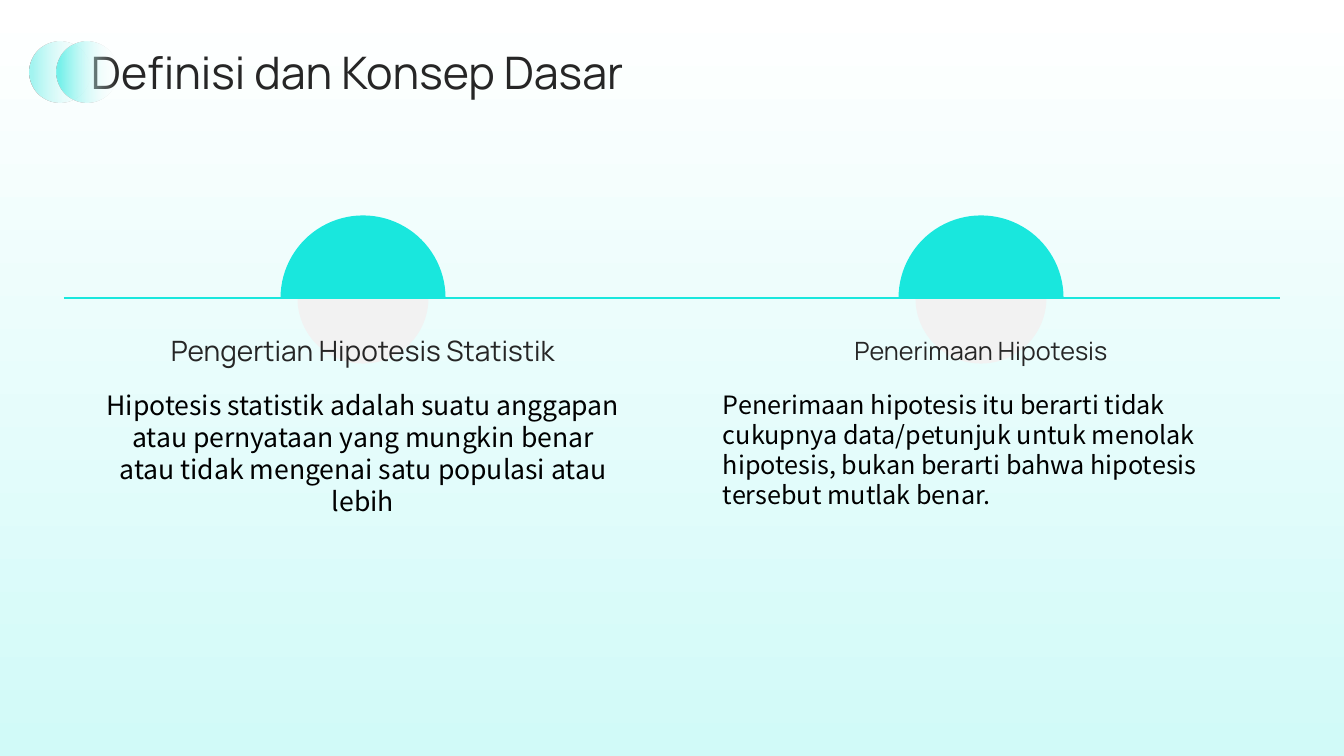
from lxml.etree import SubElement
from pptx import Presentation
from pptx.dml.color import RGBColor
from pptx.enum.shapes import MSO_CONNECTOR, MSO_SHAPE
from pptx.enum.text import MSO_ANCHOR, PP_ALIGN
from pptx.oxml.ns import qn
from pptx.util import Emu, Pt

WIDTH, HEIGHT = 1344, 756
SCALE = 12192000 / WIDTH
WHITE = RGBColor(0xFF, 0xFF, 0xFF)
BLACK = RGBColor(0x00, 0x00, 0x00)
CHARCOAL = RGBColor(0x26, 0x26, 0x26)
PALE_GREY = RGBColor(0xF2, 0xF2, 0xF2)
TURQUOISE = RGBColor(0x19, 0xE7, 0xDD)
MIST = RGBColor(0xD1, 0xFA, 0xF8)
LIGHT_AQUA = RGBColor(0xA3, 0xF5, 0xF1)
AQUA = RGBColor(0x75, 0xF1, 0xEB)
HEADING_FONT, BODY_FONT = "Manrope", "Noto Sans CJK SC"
AXIS_Y = 298
CONCEPTS = [
    (105, "Pengertian Hipotesis Statistik", 20,
     "Hipotesis statistik adalah suatu anggapan atau pernyataan yang mungkin "
     "benar atau tidak mengenai satu populasi atau lebih", 19, PP_ALIGN.CENTER),
    (723, "Penerimaan Hipotesis", 18,
     "Penerimaan hipotesis itu berarti tidak cukupnya data/petunjuk untuk menolak "
     "hipotesis, bukan berarti bahwa hipotesis tersebut mutlak benar.", 18, PP_ALIGN.LEFT),
]


def px(length):
    """Turn a length in px into EMU."""
    return Emu(round(length * SCALE))


def add_plain_shape(slide, preset, left, top, width, height):
    """Add a preset shape without outline or shadow."""
    shape = slide.shapes.add_shape(preset, px(left), px(top), px(width), px(height))
    shape.shadow.inherit = False
    shape.line.fill.background()
    return shape


def fill_gradient(shape, color, start, angle, fades=False):
    """Fill a shape from a colour to white, optionally fading out."""
    shape.fill.gradient()
    shape.fill.gradient_angle = angle
    first, last = shape.fill.gradient_stops
    first.position, first.color.rgb = start, color
    last.position, last.color.rgb = 1, WHITE
    if fades:
        white = list(shape.element.spPr.iter(qn("a:srgbClr")))[-1]
        SubElement(white, qn("a:alpha"), val="0")


def add_text(slide, left, top, width, height, words, size, font, color,
             align=PP_ALIGN.LEFT, anchor=MSO_ANCHOR.TOP):
    """Add a wrapped text box without insets."""
    frame = slide.shapes.add_textbox(px(left), px(top), px(width), px(height)).text_frame
    frame.word_wrap = True
    frame.vertical_anchor = anchor
    frame.margin_left = frame.margin_right = frame.margin_top = frame.margin_bottom = 0
    paragraph = frame.paragraphs[0]
    paragraph.alignment = align
    run = paragraph.add_run()
    run.text = words
    run.font.size, run.font.name = Pt(size), font
    run.font.color.rgb = color


def add_half_disc(slide, center, diameter, rotation, color):
    """Add a half disc whose flat side lies on the axis."""
    half = add_plain_shape(slide, MSO_SHAPE.PIE, center - diameter / 2,
                           AXIS_Y - diameter / 2, diameter, diameter)
    half.adjustments[0], half.adjustments[1] = 54.12, 162
    half.rotation = rotation
    half.fill.solid()
    half.fill.fore_color.rgb = color


def add_axis(slide, left, right):
    """Draw the line with a half disc above and below it for each concept."""
    centers = [concept[0] + 258 for concept in CONCEPTS]
    for center in centers:
        add_half_disc(slide, center, 131, 270, PALE_GREY)
    axis = slide.shapes.add_connector(
        MSO_CONNECTOR.STRAIGHT, px(left), px(AXIS_Y), px(right), px(AXIS_Y))
    axis.line.color.rgb = TURQUOISE
    axis.line.width = Pt(1)
    SubElement(axis._element.spPr, qn("a:effectLst"))
    for center in centers:
        add_half_disc(slide, center, 165, 90, TURQUOISE)


def add_concept(slide, left, top, width, concept):
    """Place the heading and explanation of one concept."""
    _, heading, heading_size, explanation, size, align = concept
    add_text(slide, left, top, width, 47, heading, heading_size, HEADING_FONT,
             CHARCOAL, PP_ALIGN.CENTER, MSO_ANCHOR.MIDDLE)
    add_text(slide, left, top + 62, width, 207, explanation, size, BODY_FONT, BLACK, align)


def add_title(slide, left, top, width):
    """Place the title and the two fading discs over its start."""
    add_text(slide, left + 61, top + 4, width - 61, 51, "Definisi dan Konsep Dasar",
             32, HEADING_FONT, CHARCOAL, anchor=MSO_ANCHOR.MIDDLE)
    for offset, color in ((0, LIGHT_AQUA), (27, AQUA)):
        disc = add_plain_shape(slide, MSO_SHAPE.OVAL, left + offset, top, 60, 60)
        fill_gradient(disc, color, 0.05, 0, fades=True)


def main():
    """Build the slide and save it."""
    deck = Presentation()
    deck.slide_width, deck.slide_height = px(WIDTH), px(HEIGHT)
    slide = deck.slides.add_slide(deck.slide_layouts[6])
    backdrop = add_plain_shape(slide, MSO_SHAPE.RECTANGLE, 0, 0, WIDTH, HEIGHT)
    fill_gradient(backdrop, MIST, 0, 90)
    add_axis(slide, 64, 1280)
    for concept in CONCEPTS:
        add_concept(slide, concept[0], 327, 516, concept)
    add_title(slide, 30, 42, 1240)
    deck.save("out.pptx")


if __name__ == "__main__":
    main()
